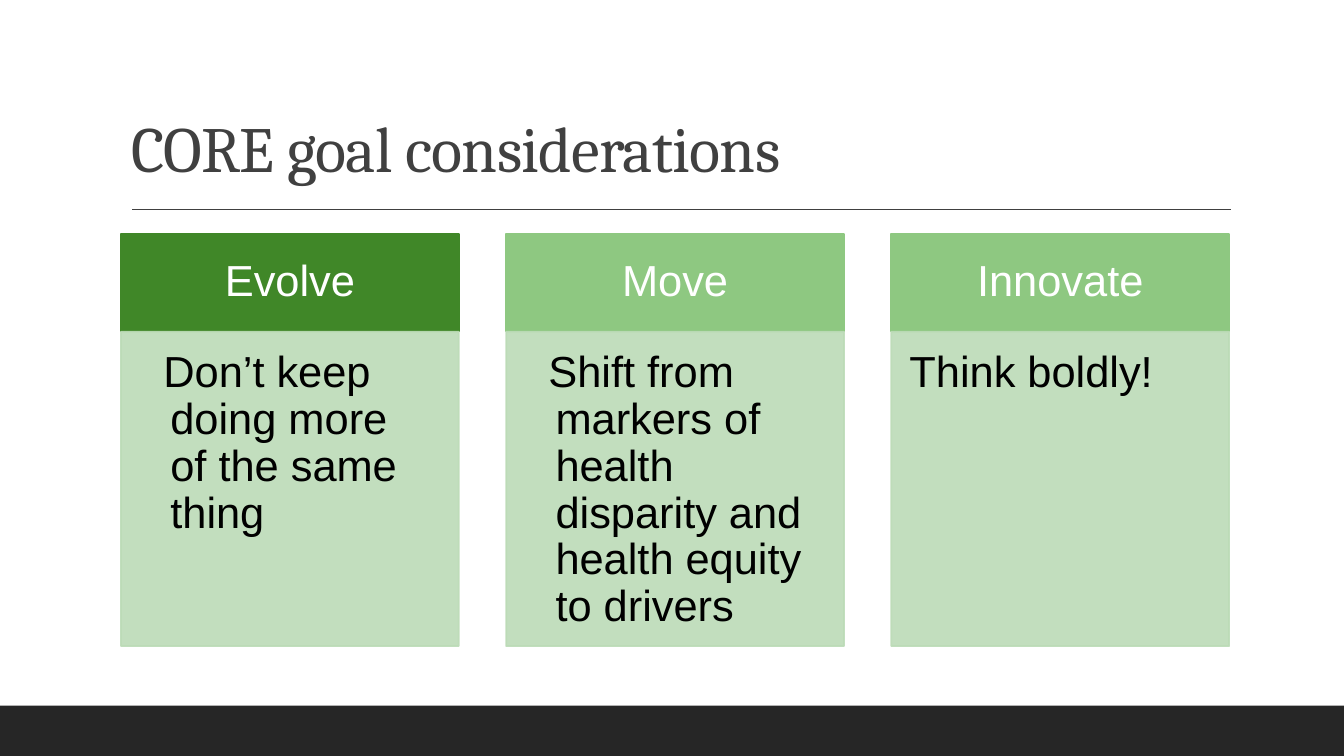
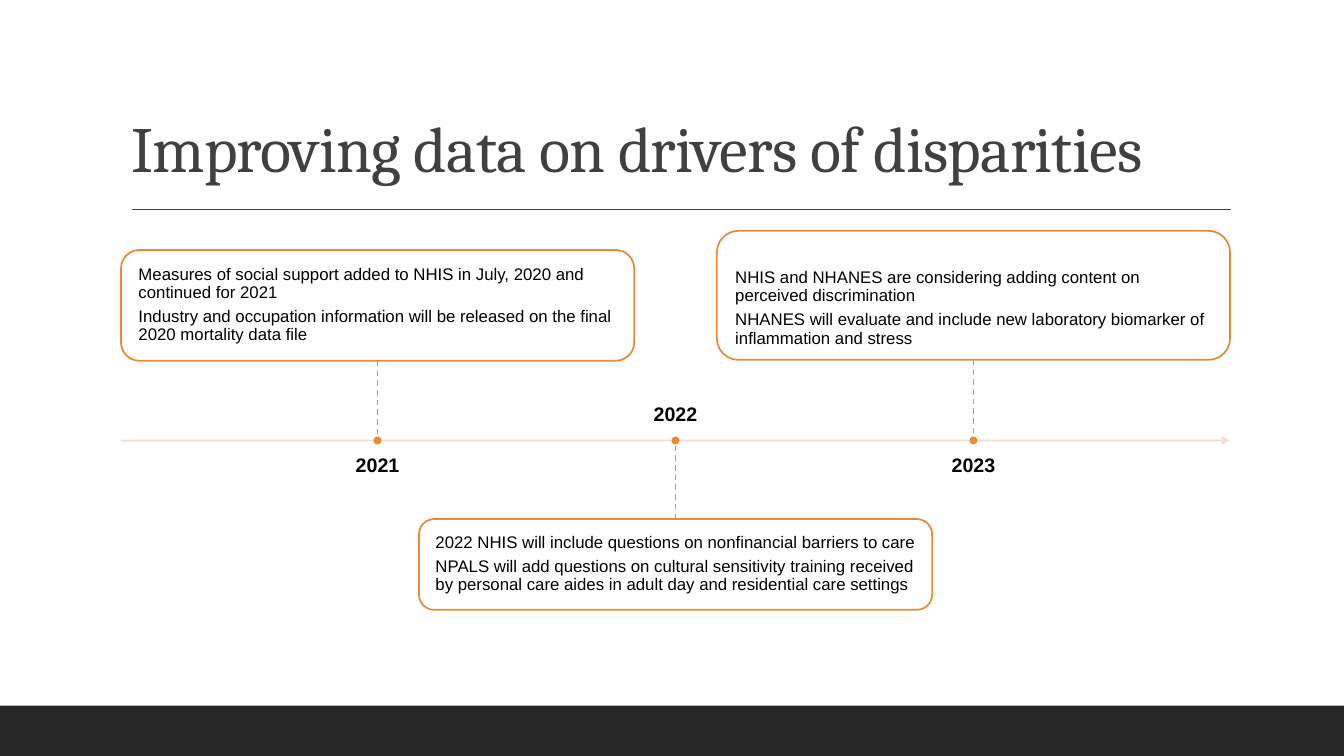
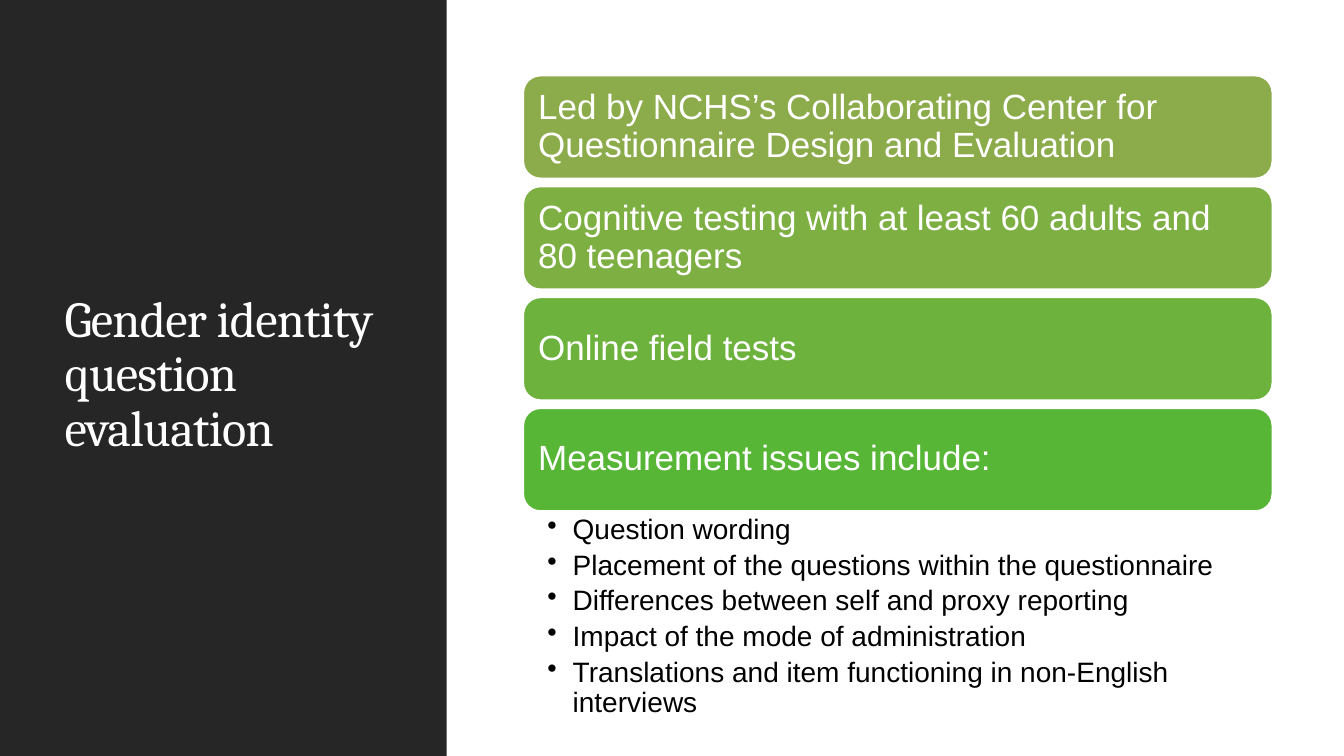
from lxml.etree import SubElement
from pptx import Presentation
from pptx.dml.color import RGBColor
from pptx.enum.dml import MSO_LINE
from pptx.enum.shapes import MSO_CONNECTOR, MSO_SHAPE
from pptx.enum.text import MSO_ANCHOR, MSO_AUTO_SIZE, PP_ALIGN
from pptx.oxml.ns import qn
from pptx.util import Inches, Pt

# Theme
WHITE = RGBColor(0xFF, 0xFF, 0xFF)
BLACK = RGBColor(0x00, 0x00, 0x00)
INK = RGBColor(0x40, 0x40, 0x40)
DARK = RGBColor(0x26, 0x26, 0x26)
DEEP_GREEN = RGBColor(0x40, 0x87, 0x28)
MID_GREEN = RGBColor(0x8E, 0xC8, 0x81)
PALE_GREEN = RGBColor(0xBC, 0xDB, 0xB7)
ORANGE = RGBColor(0xE8, 0x8B, 0x33)
PEACH = RGBColor(0xF6, 0xDA, 0xCE)
BAR_GREENS = [RGBColor(0x8C, 0xAB, 0x4A), RGBColor(0x7D, 0xAF, 0x43),
              RGBColor(0x6C, 0xB2, 0x3D), RGBColor(0x57, 0xB6, 0x36)]
BODY_FONT, TITLE_FONT = "Arial", "Cambria"
SLIDE_W, SLIDE_H = 13.33, 7.5
LEFT, CONTENT_W = 1.2, 11
BAND_H = 0.5

# Content: heading, colour, text, left margin and first-line indent
GOALS = [
    ("Evolve", DEEP_GREEN, "Don’t keep doing more of the same thing", (0.31, -0.07)),
    ("Move", MID_GREEN,
     "Shift from markers of health disparity and health equity to drivers", (0.31, -0.07)),
    ("Innovate", MID_GREEN, "Think boldly!", (0.31, -0.31)),
]
# Year, card top, card height, top and bottom inset, text
MILESTONES = [
    ("2021", 2.48, 1.1, (0.12, 0.12), [
        "Measures of social support added to NHIS in July, 2020 and continued for 2021",
        "Industry and occupation information will be released on the final 2020 "
        "mortality data file"]),
    ("2022", 5.15, 0.9, (0.12, 0.12), [
        "2022 NHIS will include questions on nonfinancial barriers to care",
        "NPALS will add questions on cultural sensitivity training received by "
        "personal care aides in adult day and residential care settings"]),
    ("2023", 2.29, 1.28, (0.31, 0.05), [
        "NHIS and NHANES are considering adding content on perceived discrimination",
        "NHANES will evaluate and include new laboratory biomarker of inflammation "
        "and stress"]),
]
STEPS = [
    "Led by NCHS’s Collaborating Center for Questionnaire Design and Evaluation",
    "Cognitive testing with at least 60 adults and 80 teenagers",
    "Online field tests",
    "Measurement issues include:",
]
ISSUES = [
    "Question wording",
    "Placement of the questions within the questionnaire",
    "Differences between self and proxy reporting",
    "Impact of the mode of administration",
    "Translations and item functioning in non-English interviews",
]


# Helpers
def set_alpha(sp, percent):
    for clr in sp._element.spPr.iter(qn("a:srgbClr")):
        SubElement(clr, qn("a:alpha")).set("val", str(percent * 1000))


def add_box(s, kind, box, fill, line=None):
    sp = s.shapes.add_shape(kind, *map(Inches, box))
    sp.shadow.inherit = False
    sp.fill.solid()
    sp.fill.fore_color.rgb = fill
    if line is None:
        sp.line.fill.background()
    else:
        sp.line.color.rgb = line
        sp.line.width = Pt(1.25)
    return sp


def add_line(s, start, end, color, width=1, dash=None):
    ln = s.shapes.add_connector(MSO_CONNECTOR.STRAIGHT, *map(Inches, start + end))
    ln.line.color.rgb = color
    ln.line.width = Pt(width)
    if dash:
        ln.line.dash_style = dash
    SubElement(ln._element.spPr, qn("a:effectLst"))
    return ln


def write(sp, texts, size, color, insets=(0, 0, 0, 0), anchor=MSO_ANCHOR.MIDDLE,
          align=PP_ALIGN.LEFT, bold=False, after=0.35, indent=None, bullet=None):
    """Fill a shape with paragraphs; insets run left, top, right, bottom."""
    tf = sp.text_frame
    tf.word_wrap = True
    tf.auto_size = MSO_AUTO_SIZE.NONE
    tf.vertical_anchor = anchor
    tf.margin_left, tf.margin_top, tf.margin_right, tf.margin_bottom = map(Inches, insets)
    for i, text in enumerate(texts):
        p = tf.paragraphs[0] if i == 0 else tf.add_paragraph()
        p.alignment = align
        p.line_spacing = 0.9
        p.space_after = Pt(round(size * after, 1))
        pPr = p._p.get_or_add_pPr()
        if indent:
            pPr.set("marL", str(Inches(indent[0])))
            pPr.set("indent", str(Inches(indent[1])))
        if bullet:
            SubElement(pPr, qn("a:buChar")).set("char", bullet)
        r = p.add_run()
        r.text = text
        r.font.name, r.font.size, r.font.bold = BODY_FONT, Pt(size), bold
        r.font.color.rgb = color


def add_text(s, box, texts, size, color, **style):
    write(s.shapes.add_textbox(*map(Inches, box)), texts, size, color, **style)


def set_title(s, text, box, size, color, anchor):
    title = s.shapes.title
    title.left, title.top, title.width, title.height = map(Inches, box)
    write(title, [text], size, color, (0.1, 0.05, 0.1, 0.05), anchor, after=0)
    r = title.text_frame.paragraphs[0].runs[0]
    r.font.name = TITLE_FONT
    r._r.get_or_add_rPr().set("spc", "-50")


def new_slide(prs):
    return prs.slides.add_slide(prs.slide_layouts[5])


def ruled_slide(prs, text):
    """Slide with a title above a rule and a dark band at the foot."""
    s = new_slide(prs)
    set_title(s, text, (LEFT, 0.31, CONTENT_W, 1.59), 46, INK, MSO_ANCHOR.BOTTOM)
    add_line(s, (1.31, 2.08), (12.21, 2.08), INK)
    add_box(s, MSO_SHAPE.RECTANGLE, (0, SLIDE_H - BAND_H, SLIDE_W, BAND_H), DARK)
    return s


# Slides
def goals_slide(prs):
    s = ruled_slide(prs, "CORE goal considerations")
    col_w, pitch, top, head_h, body_h = 3.35, 3.82, 2.32, 0.97, 3.12
    for i, (name, color, text, indent) in enumerate(GOALS):
        x = LEFT + i * pitch
        head = add_box(s, MSO_SHAPE.RECTANGLE, (x, top, col_w, head_h), color, color)
        write(head, [name], 31, WHITE, (0.24, 0.14, 0.24, 0.14), align=PP_ALIGN.CENTER)
        body = add_box(s, MSO_SHAPE.RECTANGLE, (x, top + head_h, col_w, body_h),
                       PALE_GREEN, PALE_GREEN)
        set_alpha(body, 90)
        write(body, [text], 31, BLACK, (0.18, 0.18, 0.24, 0.27), MSO_ANCHOR.TOP,
              after=0.15, indent=indent)


def timeline_slide(prs):
    s = ruled_slide(prs, "Improving data on drivers of disparities")
    axis_y, card_w, year_w, year_h, gap, dot = 4.37, 5.09, 4.48, 0.47, 0.15, 0.06
    pitch = (CONTENT_W - card_w) / (len(MILESTONES) - 1)
    axis = add_line(s, (LEFT, axis_y), (LEFT + CONTENT_W, axis_y), PEACH, 1.25)
    set_alpha(axis, 90)
    SubElement(axis.line._get_or_add_ln(), qn("a:tailEnd")).set("type", "triangle")
    for i, (year, top, height, (pad_top, pad_bottom), texts) in enumerate(MILESTONES):
        x = LEFT + i * pitch
        mid = x + card_w / 2
        above = top < axis_y
        card = add_box(s, MSO_SHAPE.ROUNDED_RECTANGLE, (x, top, card_w, height),
                       WHITE, ORANGE)
        write(card, texts, 12, BLACK, (0.12, pad_top, 0.12, pad_bottom))
        edge = top + height if above else top
        add_line(s, (mid, edge), (mid, axis_y), ORANGE, dash=MSO_LINE.DASH)
        add_box(s, MSO_SHAPE.OVAL, (mid - dot / 2, axis_y - dot / 2, dot, dot),
                ORANGE, ORANGE)
        # The year sits across the axis from its card
        year_y = axis_y + gap if above else axis_y - gap - year_h
        add_text(s, (mid - year_w / 2, year_y, year_w, year_h), [year], 14, BLACK,
                 anchor=MSO_ANCHOR.TOP if above else MSO_ANCHOR.BOTTOM,
                 align=PP_ALIGN.CENTER, bold=True)


def evaluation_slide(prs):
    s = new_slide(prs)
    panel = add_box(s, MSO_SHAPE.RECTANGLE, (0, 0, 4.43, SLIDE_H), DARK)
    s.shapes.title._element.addprevious(panel._element)
    set_title(s, "Gender identity question evaluation", (0.54, 0.57, 3.37, 6.31),
              36, WHITE, MSO_ANCHOR.MIDDLE)
    x, top, width, height, pitch = 5.19, 0.75, 7.43, 1.02, 1.1
    for i, (text, color) in enumerate(zip(STEPS, BAR_GREENS)):
        bar = add_box(s, MSO_SHAPE.ROUNDED_RECTANGLE,
                      (x, top + i * pitch, width, height), color, WHITE)
        write(bar, [text], 25, WHITE, (0.1,) * 4)
    add_text(s, (x, 5.08, width, 1.75), ISSUES, 20, BLACK,
             insets=(0.24, 0.03, 0.19, 0.03), anchor=MSO_ANCHOR.TOP, after=0.2,
             indent=(0.25, -0.25), bullet="•")


def main():
    prs = Presentation()
    prs.slide_width, prs.slide_height = Inches(SLIDE_W), Inches(SLIDE_H)
    goals_slide(prs)
    timeline_slide(prs)
    evaluation_slide(prs)
    prs.save("out.pptx")


if __name__ == "__main__":
    main()
